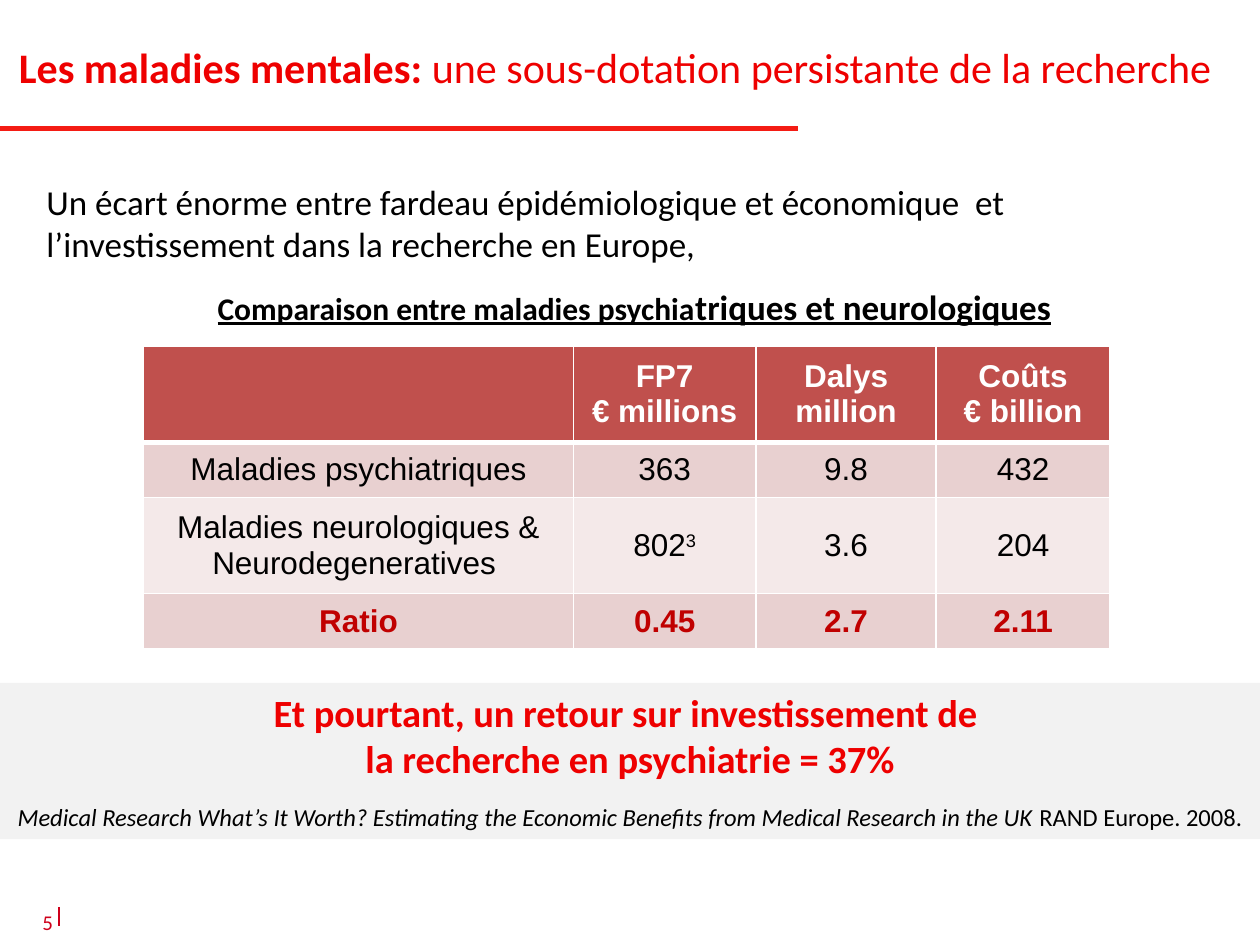
from lxml.etree import SubElement
from pptx import Presentation
from pptx.dml.color import RGBColor
from pptx.enum.shapes import MSO_CONNECTOR, MSO_SHAPE
from pptx.enum.text import MSO_ANCHOR, PP_ALIGN
from pptx.oxml import parse_xml
from pptx.oxml.ns import nsdecls, qn
from pptx.util import Inches, Pt

color = RGBColor.from_string
RED, DARK_RED, BLACK, WHITE = "EE0000", "C00000", "000000", "FFFFFF"

presentation = Presentation()
presentation.slide_width, presentation.slide_height = Inches(10), Inches(7.5)
slide = presentation.slides.add_slide(presentation.slide_layouts[5])
shapes = slide.shapes


def share(*percents):
    """Turn alternating x and y percentages of the slide into lengths."""
    sizes = presentation.slide_width, presentation.slide_height
    return [round(sizes[i % 2] * percent / 100) for i, percent in enumerate(percents)]


def style(paragraph, size, hex_color, bold=False, align=PP_ALIGN.CENTER, name="Calibri"):
    paragraph.alignment = align
    font = paragraph.font
    font.name, font.size, font.bold = name, Pt(size), bold
    font.color.rgb = color(hex_color)


# Title
title = shapes.title
title.left, title.top, title.width, title.height = share(-0.5, 3.73, 100.5, 6.8)
frame = title.text_frame
frame.margin_left = Inches(0.2)
frame.vertical_anchor = MSO_ANCHOR.TOP
paragraph = frame.paragraphs[0]
style(paragraph, 24, RED, align=PP_ALIGN.LEFT)
lead = paragraph.add_run()
lead.text = "Les maladies mentales: "
lead.font.bold = True
paragraph.add_run().text = "une sous-dotation persistante de la recherche"

# Rule under the title and tick beside the page number
for ends, hex_color, weight in (
    ((0, 13.6, 63.3, 13.6), "F41C14", 3),
    ((4.7, 96, 4.7, 98), "CF001B", 1),
):
    line = shapes.add_connector(MSO_CONNECTOR.STRAIGHT, *share(*ends))
    line.line.color.rgb = color(hex_color)
    line.line.width = Pt(weight)
    SubElement(line._element.spPr, qn("a:effectLst"))

# Page number
frame = shapes.add_textbox(*share(0, 96.27, 4.2, 2.67)).text_frame
frame.margin_left = frame.margin_right = frame.margin_top = frame.margin_bottom = 0
frame.word_wrap = True
frame.vertical_anchor = MSO_ANCHOR.MIDDLE
frame.text = "5"
style(frame.paragraphs[0], 12, "CF001B", align=PP_ALIGN.RIGHT)

# Introduction and table heading
frame = shapes.add_textbox(*share(2.7, 18.4, 95.3, 17.07)).text_frame
frame.word_wrap = True
frame.text = (
    "Un écart énorme entre fardeau épidémiologique et économique  et "
    "l’investissement dans la recherche en Europe,"
)
style(frame.paragraphs[0], 20, BLACK, align=PP_ALIGN.LEFT)
frame.paragraphs[0].space_after = Pt(6)
heading = frame.add_paragraph()
style(heading, 20, BLACK, bold=True)
heading.space_before = heading.space_after = Pt(6)
heading.font.underline = True
for text, size in (("Comparaison entre maladies psychia", 18), ("triques et neurologiques", 20)):
    run = heading.add_run()
    run.text = text
    run.font.size = Pt(size)
    run.font.underline = True

# Comparison table
rows = [
    ["", "FP7\n€ millions", "Dalys\nmillion", "Coûts\n€ billion"],
    ["Maladies psychiatriques", "363", "9.8", "432"],
    ["Maladies neurologiques &\nNeurodegeneratives ", "802", "3.6", "204"],
    ["Ratio", "0.45", "2.7", "2.11"],
]
row_styles = [  # fill, text colour, bold
    ("C0504D", WHITE, True),
    ("E8D0D0", BLACK, False),
    ("F4E9E9", BLACK, False),
    ("E8D0D0", DARK_RED, True),
]
table = shapes.add_table(4, 4, *share(11.4, 36.67, 76.7, 32.1)).table
for column, width in zip(table.columns, (3.41, 1.45, 1.43, 1.38)):
    column.width = Inches(width)
for row, height in zip(table.rows, (0.76, 0.44, 0.76, 0.44)):
    row.height = Inches(height)
for r, (texts, (fill, text_color, bold)) in enumerate(zip(rows, row_styles)):
    for c, text in enumerate(texts):
        cell = table.cell(r, c)
        cell.text = text
        cell.vertical_anchor = MSO_ANCHOR.MIDDLE
        cell.fill.solid()
        cell.fill.fore_color.rgb = color(fill)
        for paragraph in cell.text_frame.paragraphs:
            style(paragraph, 18, text_color, bold, name="Arial")
        for i, side in enumerate("LRTB"):
            thick = (r, side) in ((0, "B"), (1, "T"))
            border = parse_xml(
                f'<a:ln{side} {nsdecls("a")} w="{Pt(3 if thick else 1)}">'
                f'<a:solidFill><a:srgbClr val="{WHITE}"/></a:solidFill></a:ln{side}>'
            )
            cell._tc.get_or_add_tcPr().insert(i, border)
note = table.cell(2, 1).text_frame.paragraphs[0].add_run()
note.text = "3"
note._r.get_or_add_rPr().set("baseline", "30000")

# Conclusion band
band = shapes.add_shape(MSO_SHAPE.RECTANGLE, *share(0, 72.27, 100, 16.53))
band.shadow.inherit = False
band.fill.solid()
band.fill.fore_color.rgb = color("F2F2F2")
band.line.fill.background()
frame = band.text_frame
frame.margin_left = frame.margin_right = 0
frame.vertical_anchor = MSO_ANCHOR.TOP
frame.text = "Et pourtant, un retour sur investissement de \nla recherche en psychiatrie = 37%"
for paragraph in frame.paragraphs:
    style(paragraph, 22, RED, bold=True)
citation = frame.add_paragraph()
style(citation, 14, BLACK)
citation.space_before = Pt(12)
source = citation.add_run()
source.text = (
    "Medical Research What’s It Worth? Estimating the Economic Benefits "
    "from Medical Research in the UK "
)
source.font.italic = True
citation.add_run().text = "RAND Europe. 2008."

presentation.save("out.pptx")
